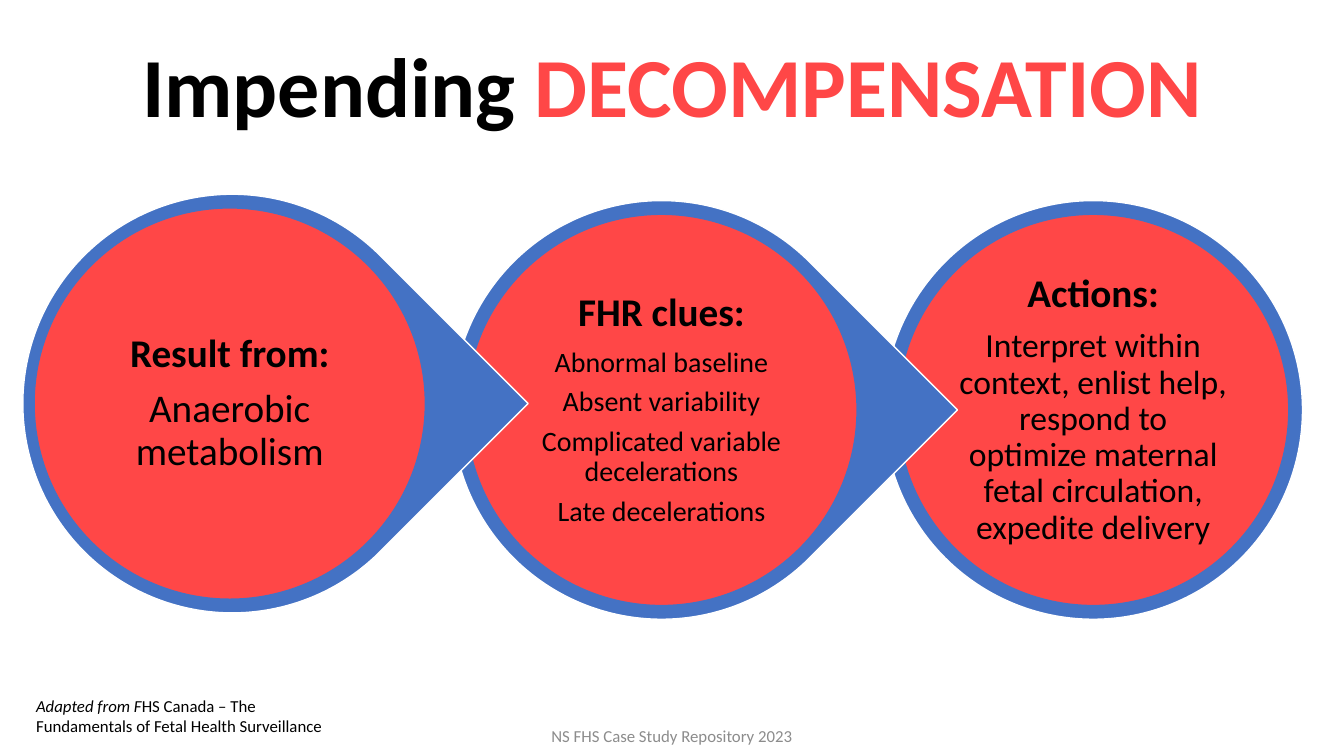
from pptx import Presentation
from pptx.dml.color import RGBColor
from pptx.enum.shapes import MSO_SHAPE as Preset
from pptx.enum.text import MSO_ANCHOR as Anchor, MSO_AUTO_SIZE as AutoSize, PP_ALIGN as Align
from pptx.util import Cm, Pt

COLORS = {"ink": "000000", "red": "FF4747", "blue": "4472C4", "white": "FFFFFF", "gray": "8C8C8C"}
FONT = "Calibri"
HALO, DISC, LABEL = 10.55, 9.86, 7.04
STEP = 10.88

STAGES = [
    ("Result from:", 28, ["Anaerobic metabolism"]),
    ("FHR clues:", 20, ["Abnormal baseline", "Absent variability",
                        "Complicated variable decelerations", "Late decelerations"]),
    ("Actions:", 24, ["Interpret within context, enlist help, respond to optimize "
                      "maternal fetal circulation, expedite delivery"]),
]


def rgb(name):
    return RGBColor.from_string(COLORS[name])


def add_span(para, text, size, color="ink", bold=False, italic=False):
    span = para.add_run()
    span.text = text
    span.font.name = FONT
    span.font.size = Pt(size)
    span.font.bold = bold
    span.font.italic = italic
    span.font.color.rgb = rgb(color)


def place(shape, left, top, width, height):
    shape.left, shape.top, shape.width, shape.height = map(Cm, (left, top, width, height))


def centered(x, y, size):
    return [Cm(x - size / 2), Cm(y - size / 2), Cm(size), Cm(size)]


def add_text_box(page, box, anchor=Anchor.TOP):
    frame = page.shapes.add_textbox(*box).text_frame
    frame.word_wrap = True
    frame.vertical_anchor = anchor
    return frame


def add_round(page, preset, box, fill, line):
    shape = page.shapes.add_shape(preset, *box)
    shape.shadow.inherit = False
    shape.fill.solid()
    shape.fill.fore_color.rgb = rgb(fill)
    shape.line.color.rgb = rgb(line)
    shape.line.width = Pt(1)
    return shape


def add_stage(page, x, y, stage, pointed, halo_shift):
    heading, size, lines = stage
    preset = Preset.TEAR if pointed else Preset.OVAL
    halo = add_round(page, preset, centered(x + halo_shift, y, HALO), "blue", "white")
    if pointed:
        halo.adjustments[0] = 1
        halo.rotation = 45
    add_round(page, Preset.OVAL, centered(x, y, DISC), "red", "blue")

    frame = add_text_box(page, centered(x, y, LABEL), Anchor.MIDDLE)
    frame.margin_left = frame.margin_right = frame.margin_top = frame.margin_bottom = Cm(0.1)
    for index, text in enumerate([heading] + lines):
        para = frame.add_paragraph() if index else frame.paragraphs[0]
        points = size if index else 28
        para.alignment = Align.CENTER
        para.line_spacing = 0.9
        para.space_after = Pt(round(points / 3, 1))
        add_span(para, text, points, bold=index == 0)


def add_process(page, left, middle):
    last = len(STAGES) - 1
    for index in range(last, -1, -1):
        first = index == 0
        add_stage(page, left + index * STEP, middle - (0.16 if first else 0),
                  STAGES[index], index < last, 0.06 if first else 0)


def add_title(page, left, top, width, height):
    title = page.shapes.title
    place(title, left, top, width, height)
    frame = title.text_frame
    frame.auto_size = AutoSize.NONE
    frame.word_wrap = True
    frame.vertical_anchor = Anchor.TOP
    para = frame.paragraphs[0]
    para.alignment = Align.CENTER
    para.line_spacing = 0.9
    add_span(para, "Impending ", 60, bold=True)
    add_span(para, "DECOMPENSATION", 60, "red", bold=True)


def add_footer(page, left, top, width, height):
    frame = add_text_box(page, map(Cm, (left, top, width, height)), Anchor.MIDDLE)
    para = frame.paragraphs[0]
    para.alignment = Align.CENTER
    add_span(para, "NS FHS Case Study Repository 2023", 12, "gray")


def add_credit(page, left, top, width, height):
    frame = add_text_box(page, map(Cm, (left, top, width, height)))
    para = frame.paragraphs[0]
    add_span(para, "Adapted from F", 12, italic=True)
    add_span(para, "HS Canada – The Fundamentals of Fetal Health Surveillance", 12)


def main():
    deck = Presentation()
    deck.slide_width, deck.slide_height = Cm(33.87), Cm(19.05)
    page = deck.slides.add_slide(deck.slide_layouts[5])
    add_title(page, 2.33, 1.01, 29.21, 3.68)
    add_process(page, 5.79, 10.33)
    add_footer(page, 11.22, 18.03, 11.43, 1.01)
    add_credit(page, 0.66, 17.4, 8.48, 1.27)
    deck.save("out.pptx")


if __name__ == "__main__":
    main()
